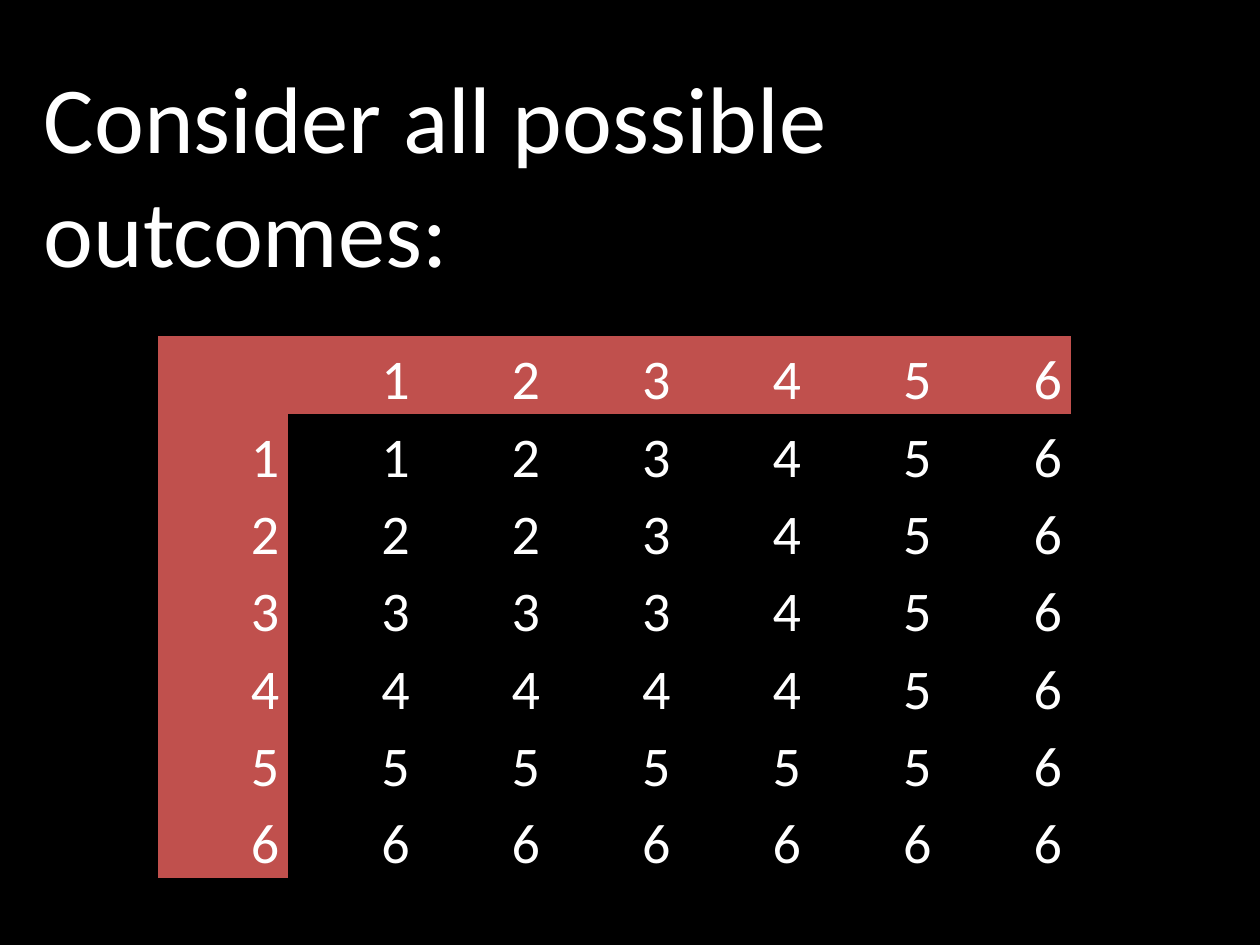
"""Build a slide tabulating the larger value of two dice."""
from dataclasses import dataclass

import pptx
import pptx.dml.color
import pptx.enum.text
import pptx.util

Inches = pptx.util.Inches
Pt = pptx.util.Pt

BLACK = pptx.dml.color.RGBColor(0x00, 0x00, 0x00)
WHITE = pptx.dml.color.RGBColor(0xFF, 0xFF, 0xFF)
RED = pptx.dml.color.RGBColor(0xC0, 0x50, 0x4D)
FONT = "Calibri"
NO_STYLE_NO_GRID = "{2D5ABB26-0587-4C30-8999-92F81FD0307C}"
FACES = 6


@dataclass(frozen=True)
class Outcome:
    first: int
    second: int

    @property
    def is_header(self) -> bool:
        return self.first == 0 or self.second == 0

    @property
    def label(self) -> str:
        return str(max(self.first, self.second) or "")


def style_paragraph(paragraph, size: float) -> None:
    paragraph.font.name = FONT
    paragraph.font.size = Pt(size)
    paragraph.font.color.rgb = WHITE


def add_heading(slide) -> None:
    heading = slide.shapes.add_textbox(
        Inches(0.25), Inches(0.42), Inches(9.7), Inches(1.92)
    ).text_frame
    heading.word_wrap = True
    heading.text = "Consider all possible outcomes:"
    style_paragraph(heading.paragraphs[0], 54)


def fill_cell(cell, outcome: Outcome) -> None:
    if outcome.is_header:
        cell.fill.solid()
        cell.fill.fore_color.rgb = RED
    else:
        cell.fill.background()
    cell.vertical_anchor = pptx.enum.text.MSO_ANCHOR.BOTTOM
    cell.margin_left = cell.margin_right = Inches(0.07)
    cell.margin_top = cell.margin_bottom = 0
    cell.text = outcome.label
    value = cell.text_frame.paragraphs[0]
    value.alignment = pptx.enum.text.PP_ALIGN.RIGHT
    value.line_spacing = 1.15
    style_paragraph(value, 32)


def add_outcomes(slide) -> None:
    count = FACES + 1
    outcomes = slide.shapes.add_table(
        count, count, Inches(1.25), Inches(2.67), Inches(7.25), Inches(4.29)
    ).table
    outcomes.first_row = False
    outcomes.horz_banding = False
    outcomes._tbl.tblPr[0].text = NO_STYLE_NO_GRID
    for first in range(count):
        for second in range(count):
            fill_cell(outcomes.cell(first, second), Outcome(first, second))


def main() -> None:
    deck = pptx.Presentation()
    deck.slide_width = Inches(10)
    deck.slide_height = Inches(7.5)
    slide = deck.slides.add_slide(deck.slide_layouts[6])
    slide.background.fill.solid()
    slide.background.fill.fore_color.rgb = BLACK
    add_heading(slide)
    add_outcomes(slide)
    deck.save("out.pptx")


if __name__ == "__main__":
    main()
